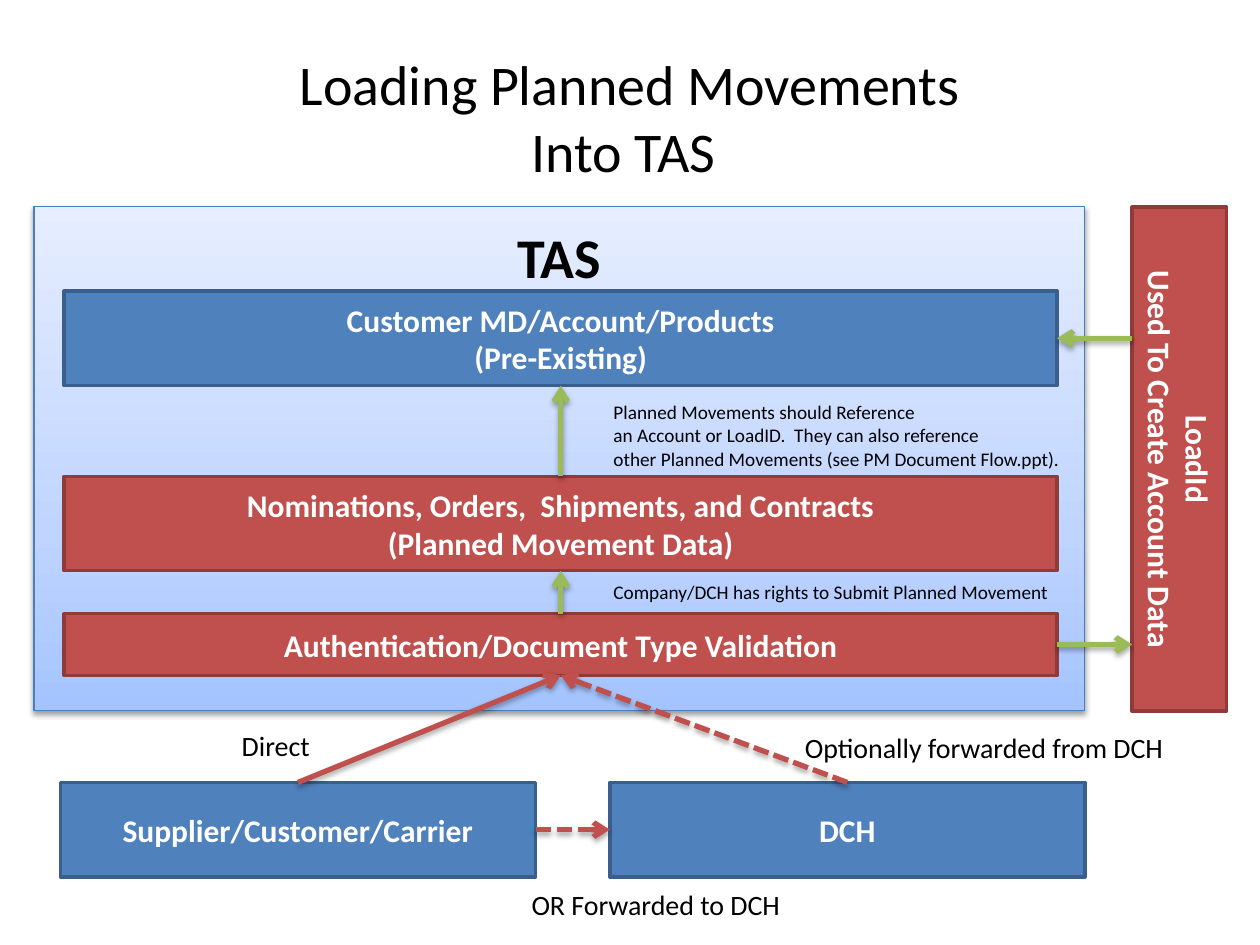
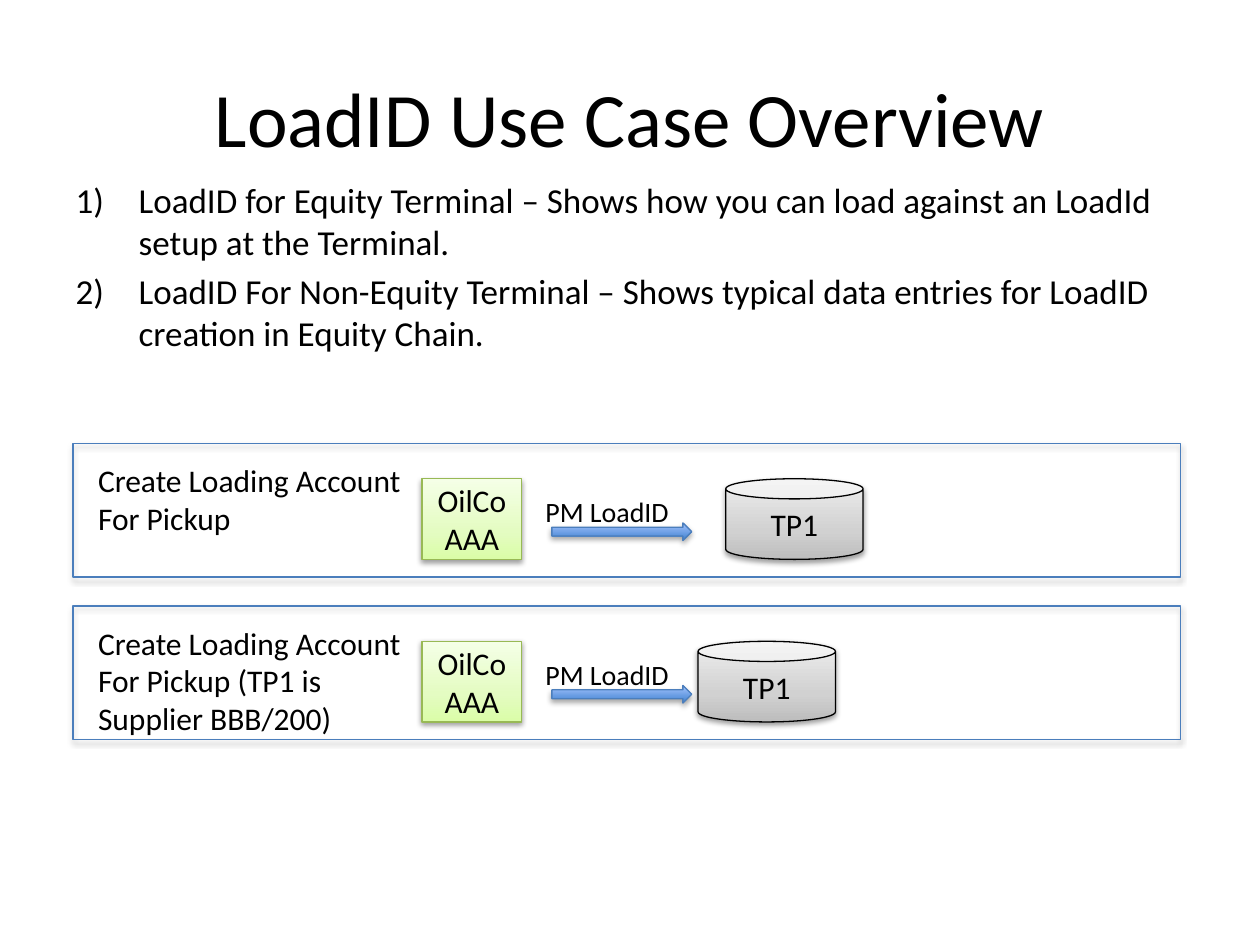
from dataclasses import dataclass

from lxml import etree
from pptx import Presentation
from pptx.dml.color import RGBColor
from pptx.enum.dml import MSO_LINE
from pptx.enum.shapes import MSO_CONNECTOR, MSO_SHAPE
from pptx.enum.text import MSO_ANCHOR, MSO_AUTO_SIZE, PP_ALIGN
from pptx.oxml import parse_xml
from pptx.oxml.ns import nsdecls, qn
from pptx.util import Pt

PX = 9144
RECT, CAN, RIGHT_ARROW = MSO_SHAPE.RECTANGLE, MSO_SHAPE.CAN, MSO_SHAPE.RIGHT_ARROW
STRAIGHT, DASH = MSO_CONNECTOR.STRAIGHT, MSO_LINE.SQUARE_DOT
LEFT, CENTER = PP_ALIGN.LEFT, PP_ALIGN.CENTER
TOP_ANCHOR, MIDDLE = MSO_ANCHOR.TOP, MSO_ANCHOR.MIDDLE
TOP, LEFT_SIDE, BOTTOM, RIGHT_SIDE = range(4)


@dataclass(frozen=True)
class Theme:
    font: str = "Calibri"
    black: str = "000000"
    white: str = "FFFFFF"
    blue: str = "4F81BD"
    blue_edge: str = "3A5F8C"
    red: str = "C0504D"
    red_edge: str = "8E3B39"
    green: str = "9BBB59"
    frame_edge: str = "4B7EBC"
    company_edge: str = "98B955"
    sky: tuple = ((0, "A4C4FF"), (35, "BFD4FF"), (100, "E6EEFF"))
    lime: tuple = ((0, "DAFDA7"), (35, "E4FCC2"), (100, "F5FFE7"))
    silver: tuple = ((0, "BDBDBD"), (35, "D1D1D1"), (100, "EEEEEE"))
    flow: tuple = ((0, "3F80CE"), (100, "A4C4FF"))
    soft_shadow: tuple = (38, 20000)
    deep_shadow: tuple = (35, 23000)
    title: int = 44
    heading: int = 32
    listing: int = 20
    body: int = 18
    label: int = 16
    note: int = 11


theme = Theme()


def write(box, lines, size, colour=theme.black, bold=False, align=LEFT, anchor=TOP_ANCHOR, wrap=True):
    frame = box.text_frame
    frame.word_wrap = wrap
    frame.auto_size = MSO_AUTO_SIZE.NONE
    frame.vertical_anchor = anchor
    for index, line in enumerate(lines):
        para = frame.add_paragraph() if index else frame.paragraphs[0]
        para.alignment = align
        for part_index, part in enumerate(line.split("\n")):
            if part_index:
                para.add_line_break()
            span = para.add_run()
            span.text = part
            span.font.name = theme.font
            span.font.size = Pt(size)
            span.font.bold = bold
            span.font.color.rgb = RGBColor.from_string(colour)


def paint(shape, edge, width, shadow=None, fill=None):
    properties = shape.element.spPr
    if isinstance(fill, tuple):
        shape.fill.gradient()
        stops = "".join(
            f'<a:gs pos="{stop * 1000}"><a:srgbClr val="{colour}"/></a:gs>' for stop, colour in fill
        )
        gradient = parse_xml(
            f'<a:gradFill {nsdecls("a")} rotWithShape="1"><a:gsLst>{stops}</a:gsLst>'
            '<a:lin ang="16200000" scaled="0"/></a:gradFill>'
        )
        properties.replace(properties.find(qn("a:gradFill")), gradient)
    elif fill:
        shape.fill.solid()
        shape.fill.fore_color.rgb = RGBColor.from_string(fill)
    elif hasattr(shape, "fill"):
        shape.fill.background()
    shape.line.color.rgb = RGBColor.from_string(edge)
    shape.line.width = Pt(width)
    effects = etree.SubElement(properties, qn("a:effectLst"))
    if shadow:
        alpha, distance = shadow
        effects.append(parse_xml(
            f'<a:outerShdw {nsdecls("a")} blurRad="40000" dist="{distance}" dir="5400000" rotWithShape="0">'
            f'<a:srgbClr val="000000"><a:alpha val="{alpha * 1000}"/></a:srgbClr></a:outerShdw>'
        ))


deck = Presentation()
deck.slide_width = 1000 * PX
deck.slide_height = 750 * PX

pages = []
for layout, heading, size in (
    (5, "Loading Planned Movements\nInto TAS ", theme.heading),
    (1, "LoadID Use Case Overview", theme.title),
):
    page = deck.slides.add_slide(deck.slide_layouts[layout])
    title = page.shapes.title
    title.left, title.top, title.width, title.height = (v * PX for v in (50, 30, 900, 125))
    write(title, [heading], size, align=CENTER, anchor=MIDDLE)
    pages.append(page)
movements, use_cases = pages

system = movements.shapes.add_shape(RECT, 27 * PX, 164 * PX, 834 * PX, 400 * PX)
paint(system, theme.frame_edge, 0.75, theme.soft_shadow, theme.sky)
write(system, ["TAS"], theme.heading, bold=True, align=CENTER)
system.text_frame.margin_top = 13 * PX

blue = (theme.blue, theme.blue_edge)
red = (theme.red, theme.red_edge)
blocks = []
for left, top, width, height, (fill, edge), lines in (
    (51, 231, 788, 75, blue, ["Customer MD/Account/Products", "(Pre-Existing)"]),
    (51, 378, 788, 75, red, ["Nominations, Orders,  Shipments, and Contracts", "(Planned Movement Data)"]),
    (51, 487, 788, 49, red, ["Authentication/Document Type Validation"]),
    (48, 621, 377, 75, blue, ["Supplier/Customer/Carrier"]),
    (484, 621, 377, 75, blue, ["DCH"]),
    (736, 327, 400, 75, red, ["LoadId", "Used To Create Account Data"]),
):
    block = movements.shapes.add_shape(RECT, left * PX, top * PX, width * PX, height * PX)
    paint(block, edge, 2, fill=fill)
    write(block, lines, theme.body, theme.white, True, CENTER, MIDDLE)
    blocks.append(block)
customer, orders, validation, supplier, forwarder, load_bar = blocks
load_bar.rotation = 90
bar_edge = load_bar.left + (load_bar.width - load_bar.height) // 2

for left, top, width, height, size, anchor, lines in (
    (182, 573, 79, 37, theme.label, MIDDLE, ["Direct"]),
    (629, 575, 314, 37, theme.label, MIDDLE, ["Optionally forwarded from DCH"]),
    (412, 699, 255, 37, theme.label, MIDDLE, ["OR Forwarded to DCH"]),
    (477, 313, 388, 66, theme.note, TOP_ANCHOR, [
        "Planned Movements should Reference",
        "an Account or LoadID.  They can also reference",
        "other Planned Movements (see PM Document Flow.ppt).",
    ]),
    (477, 456, 376, 29, theme.note, TOP_ANCHOR, ["Company/DCH has rights to Submit Planned Movement"]),
):
    label = movements.shapes.add_textbox(left * PX, top * PX, width * PX, height * PX)
    write(label, lines, size, anchor=anchor, wrap=False)

for start, start_side, end, end_side, colour, dashed in (
    (orders, TOP, customer, BOTTOM, theme.green, False),
    (validation, TOP, orders, BOTTOM, theme.green, False),
    (supplier, TOP, validation, BOTTOM, theme.red, False),
    (forwarder, TOP, validation, BOTTOM, theme.red, True),
    (supplier, RIGHT_SIDE, forwarder, LEFT_SIDE, theme.red, True),
    (None, None, customer, RIGHT_SIDE, theme.green, False),
    (validation, RIGHT_SIDE, None, None, theme.green, False),
):
    row = start or end
    level = row.top + row.height // 2
    link = movements.shapes.add_connector(STRAIGHT, bar_edge, level, bar_edge, level)
    if start:
        link.begin_connect(start, start_side)
    if end:
        link.end_connect(end, end_side)
    paint(link, colour, 3, theme.deep_shadow)
    if dashed:
        link.line.dash_style = DASH
    etree.SubElement(link.element.spPr.find(qn("a:ln")), qn("a:tailEnd"), type="arrow")

overview = use_cases.placeholders[1]
overview.left, overview.top, overview.width, overview.height = (v * PX for v in (50, 137, 900, 178))
write(overview, [
    "LoadID for Equity Terminal – Shows how you can load against an LoadId setup at the Terminal.",
    "LoadID For Non-Equity Terminal – Shows typical data entries for LoadID creation in Equity Chain.",
], theme.listing)
for index, para in enumerate(overview.text_frame.paragraphs):
    para.space_before = Pt(4 * index)
    settings = para._p.get_or_add_pPr()
    settings.set("marL", str(50 * PX))
    settings.set("indent", str(-50 * PX))
    etree.SubElement(settings, qn("a:buAutoNum"), type="arabicParenR")

for case, (terminal_left, height, purpose) in enumerate((
    (576, 71, "For Pickup"),
    (554, 101, "For Pickup (TP1 is Supplier BBB/200)"),
)):
    top = 352 + 129 * case
    for kind, left, offset, width, tall, fill, edge, shadow, lines in (
        (RECT, 58, 0, 879, 106, None, theme.frame_edge, theme.deep_shadow, []),
        (RECT, 335, 28, 79, 64, theme.lime, theme.company_edge, theme.soft_shadow, ["OilCo", "AAA"]),
        (CAN, terminal_left, 28, 109, 64, theme.silver, theme.black, theme.soft_shadow, ["TP1"]),
        (RIGHT_ARROW, 438, 63, 111, 14, theme.flow, theme.frame_edge, theme.deep_shadow, []),
    ):
        shape = use_cases.shapes.add_shape(kind, left * PX, (top + offset) * PX, width * PX, tall * PX)
        paint(shape, edge, 0.75, shadow, fill)
        write(shape, lines, theme.body, align=CENTER, anchor=MIDDLE)
    for left, offset, width, tall, size, wrap, lines in (
        (423, 36, 119, 37, theme.label, False, ["PM LoadID"]),
        (68, 9, 264, height, theme.body, True, ["Create Loading Account", purpose]),
    ):
        label = use_cases.shapes.add_textbox(left * PX, (top + offset) * PX, width * PX, tall * PX)
        write(label, lines, size, wrap=wrap)

deck.save("out.pptx")
